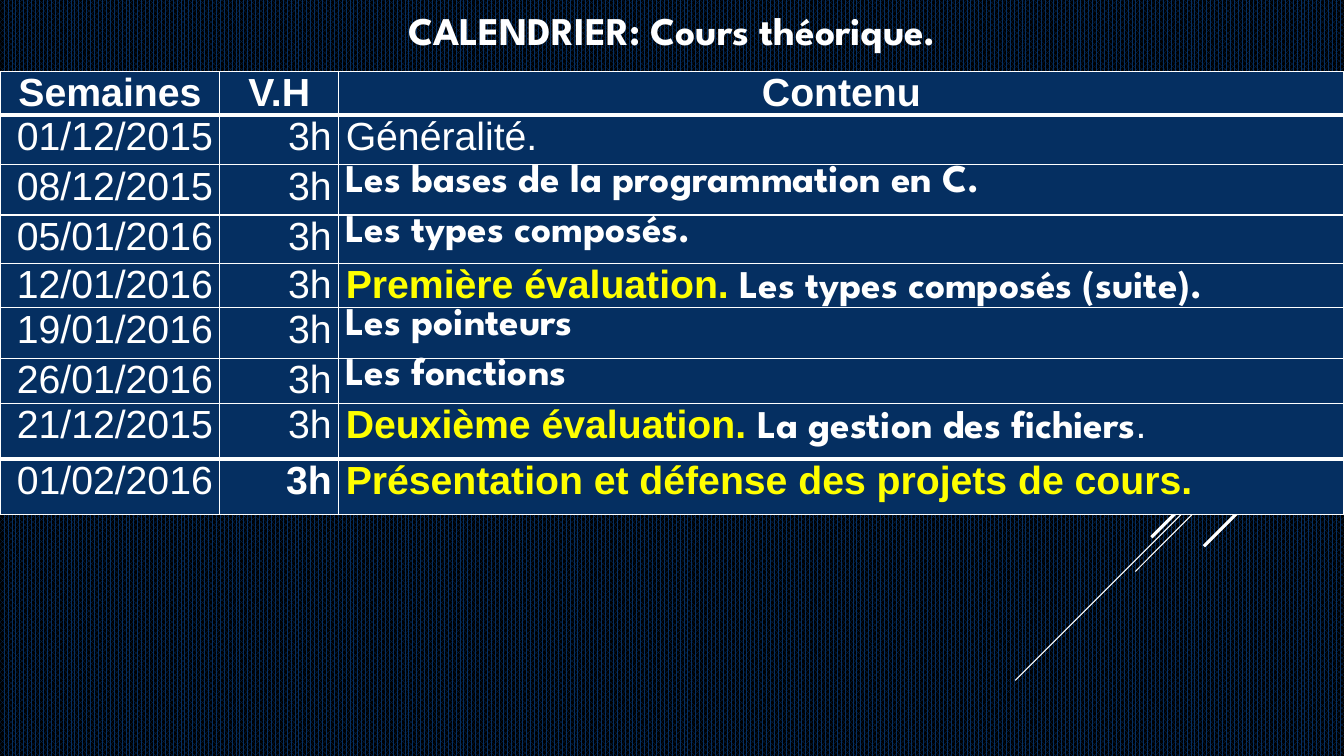
from dataclasses import dataclass

from lxml import etree
from pptx import Presentation
from pptx.dml.color import RGBColor
from pptx.enum.dml import MSO_PATTERN
from pptx.enum.shapes import MSO_CONNECTOR
from pptx.enum.text import MSO_AUTO_SIZE, PP_ALIGN
from pptx.oxml.ns import qn
from pptx.util import Inches, Pt

NAVY = RGBColor(0x05, 0x2F, 0x61)
BLACK = RGBColor(0x00, 0x00, 0x00)
WHITE = RGBColor(0xFF, 0xFF, 0xFF)
YELLOW = RGBColor(0xFF, 0xFF, 0x00)

DOTTED = MSO_PATTERN.PERCENT_75
STRAIGHT = MSO_CONNECTOR.STRAIGHT
GROW = MSO_AUTO_SIZE.SHAPE_TO_FIT_TEXT
CENTER, RIGHT, JUSTIFY = PP_ALIGN.CENTER, PP_ALIGN.RIGHT, PP_ALIGN.JUSTIFY

SLIDE_WIDTH, SLIDE_HEIGHT = 13.33, 7.5
BODY_FONT, TITLE_FONT = "Arial", "League Spartan"
TEXT_SIZE = 28
THIN, THICK = 1, 3


@dataclass(frozen=True)
class Phrase:
    text: str
    font: str = BODY_FONT
    color: RGBColor = WHITE
    bold: bool = False


@dataclass(frozen=True)
class Session:
    date: str
    height: float
    content: tuple[Phrase, ...]
    bold_hours: bool = False


@dataclass(frozen=True)
class Ray:
    start_y: float
    end_x: float
    end_y: float
    weight: float


def topic(text: str) -> Phrase:
    return Phrase(text, font=TITLE_FONT, bold=True)


def milestone(text: str) -> Phrase:
    return Phrase(text, color=YELLOW, bold=True)


RAYS = (
    Ray(3.24, 12.33, 4.24, 0.75),
    Ray(3.49, 10.07, 6.75, 0.75),
    Ray(3.59, 11.26, 5.67, 0.75),
    Ray(3.42, 11.42, 5.33, 2.25),
    Ray(4.03, 11.94, 5.42, 2.25),
)
HEADINGS = ("Semaines", "V.H", "Contenu")
HEADING_HEIGHT = 0.25
COLUMN_WIDTHS = (2.18, 1.18, 9.97)
HOURS = "3h"
SESSIONS = (
    Session("01/12/2015", 0.49, (Phrase("Généralité."),)),
    Session("08/12/2015", 0.5, (topic("Les bases de la programmation en C."),)),
    Session("05/01/2016", 0.48, (topic("Les types composés."),)),
    Session("12/01/2016", 0.44, (milestone("Première évaluation. "),
                                 topic("Les types composés (suite)."))),
    Session("19/01/2016", 0.5, (topic("Les pointeurs"),)),
    Session("26/01/2016", 0.45, (topic("Les fonctions"),)),
    Session("21/12/2015", 0.55, (milestone("Deuxième évaluation. "),
                                 topic("La gestion des fichiers"), Phrase("."))),
    Session("01/02/2016", 0.55,
            (milestone("Présentation et défense des projets de cours."),),
            bold_hours=True),
)


def write(paragraph, phrases: tuple[Phrase, ...], alignment: PP_ALIGN) -> None:
    paragraph.alignment = alignment
    for phrase in phrases:
        run = paragraph.add_run()
        run.text = phrase.text
        run.font.name = phrase.font
        run.font.size = Pt(TEXT_SIZE)
        run.font.bold = phrase.bold
        run.font.color.rgb = phrase.color


def draw_ray(slide, ray: Ray) -> None:
    line = slide.shapes.add_connector(
        STRAIGHT, Inches(SLIDE_WIDTH), Inches(ray.start_y),
        Inches(ray.end_x), Inches(ray.end_y))
    line.line.color.rgb = WHITE
    line.line.width = Pt(ray.weight)
    etree.SubElement(line._element.spPr, qn("a:effectLst"))


def set_borders(cell, top: float, bottom: float) -> None:
    properties = cell._tc.get_or_add_tcPr()
    sides = (("a:lnL", THIN), ("a:lnR", THIN), ("a:lnT", top), ("a:lnB", bottom))
    for position, (tag, weight) in enumerate(sides):
        border = etree.Element(qn(tag), w=str(Pt(weight)))
        fill = etree.SubElement(border, qn("a:solidFill"))
        etree.SubElement(fill, qn("a:srgbClr"), val=str(WHITE))
        properties.insert(position, border)


def fill_cell(cell, phrases: tuple[Phrase, ...], alignment: PP_ALIGN,
              top: float, bottom: float) -> None:
    cell.margin_left = cell.margin_right = Inches(0.07)
    cell.margin_top = cell.margin_bottom = 0
    cell.fill.solid()
    cell.fill.fore_color.rgb = NAVY
    set_borders(cell, top, bottom)
    write(cell.text_frame.paragraphs[0], phrases, alignment)


def draw_calendar(slide) -> None:
    last = len(SESSIONS)
    calendar = slide.shapes.add_table(
        last + 1, len(HEADINGS), 0, Inches(0.71),
        Inches(SLIDE_WIDTH), Inches(4.46)).table
    calendar.first_row = calendar.horz_banding = False
    for column, width in zip(calendar.columns, COLUMN_WIDTHS):
        column.width = Inches(width)

    # Heading row
    calendar.rows[0].height = Inches(HEADING_HEIGHT)
    for column, heading in enumerate(HEADINGS):
        fill_cell(calendar.cell(0, column), (Phrase(heading, bold=True),),
                  CENTER, THIN, THICK)

    # One row per session, with thick rules under the heading and above the last
    for row, session in enumerate(SESSIONS, start=1):
        calendar.rows[row].height = Inches(session.height)
        top = THICK if row in (1, last) else THIN
        bottom = THICK if row == last - 1 else THIN
        entries = (
            ((Phrase(session.date),), RIGHT),
            ((Phrase(HOURS, bold=session.bold_hours),), RIGHT),
            (session.content, JUSTIFY),
        )
        for column, (phrases, alignment) in enumerate(entries):
            fill_cell(calendar.cell(row, column), phrases, alignment, top, bottom)


def draw_title(slide) -> None:
    title = slide.shapes.add_textbox(
        0, Inches(0.01), Inches(SLIDE_WIDTH), Inches(0.57)).text_frame
    title.word_wrap = True
    title.auto_size = GROW
    write(title.paragraphs[0], (topic("CALENDRIER: Cours théorique."),), CENTER)


def main() -> None:
    deck = Presentation()
    deck.slide_width = Inches(SLIDE_WIDTH)
    deck.slide_height = Inches(SLIDE_HEIGHT)
    slide = deck.slides.add_slide(deck.slide_layouts[6])

    # Dotted background
    backdrop = slide.background.fill
    backdrop.patterned()
    backdrop.pattern = DOTTED
    backdrop.fore_color.rgb = NAVY
    backdrop.back_color.rgb = BLACK

    # Diagonal rays, partly behind the calendar
    for ray in RAYS:
        draw_ray(slide, ray)

    draw_calendar(slide)
    draw_title(slide)
    deck.save("out.pptx")


if __name__ == "__main__":
    main()
